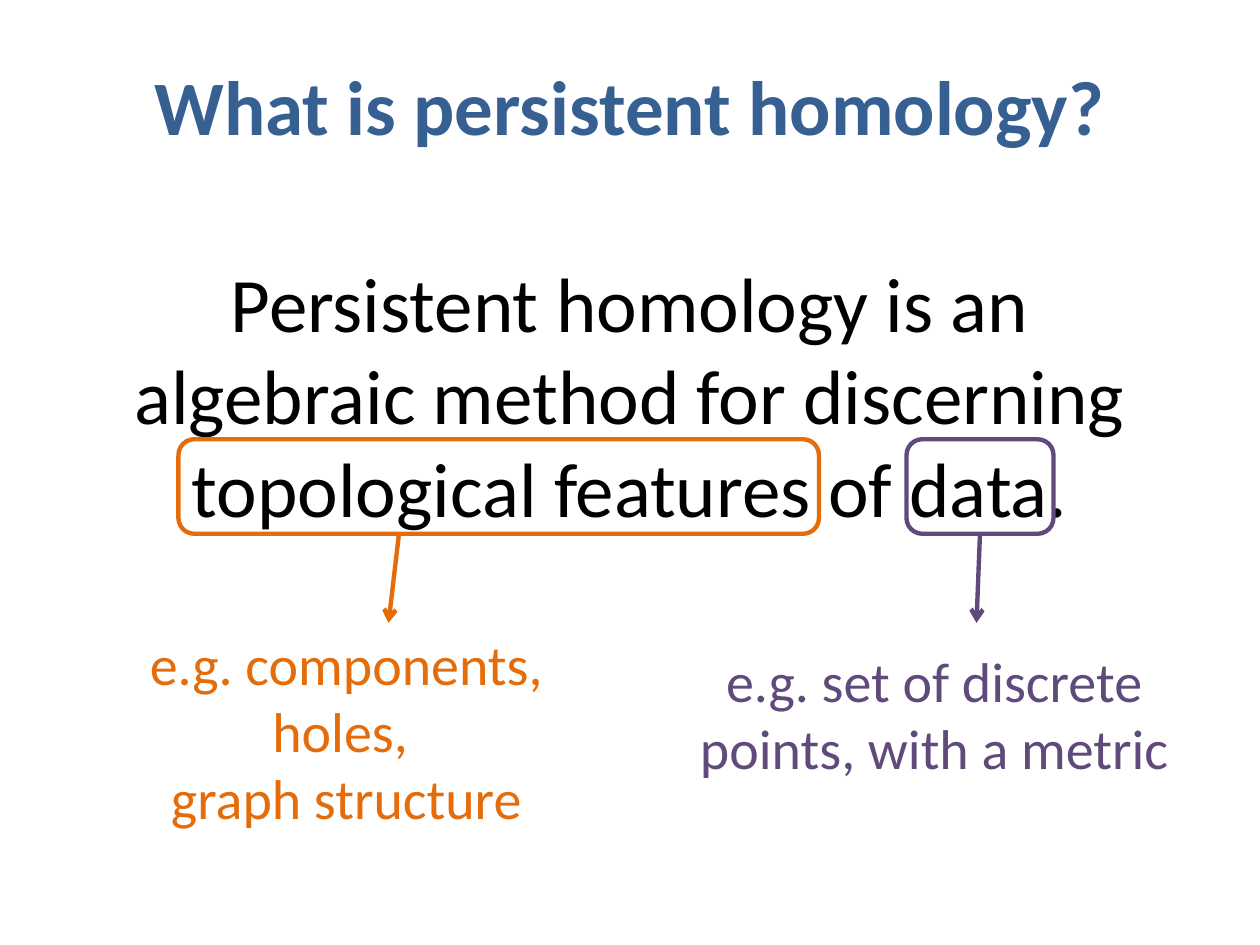
from dataclasses import dataclass

from lxml.etree import SubElement
from pptx import Presentation
from pptx.dml.color import RGBColor
from pptx.enum.shapes import MSO_CONNECTOR, MSO_SHAPE
from pptx.enum.text import MSO_AUTO_SIZE, PP_ALIGN
from pptx.oxml.ns import qn
from pptx.util import Pt


@dataclass(frozen=True)
class Theme:
    font: str = "Calibri"
    title: str = "376092"
    body: str = "000000"
    features: str = "E46C0A"
    data: str = "604A7B"
    large: float = 44
    small: float = 32
    line: float = 2.5


class SlideBuilder:
    def __init__(self, slide, theme):
        self.s = slide
        self.theme = theme

    def text(self, box, paragraphs, size, color, bold=False):
        sp = self.s.shapes.add_textbox(*map(Pt, box))
        tf = sp.text_frame
        tf.word_wrap = True
        tf.auto_size = MSO_AUTO_SIZE.SHAPE_TO_FIT_TEXT
        for i, content in enumerate(paragraphs):
            p = tf.add_paragraph() if i else tf.paragraphs[0]
            p.alignment = PP_ALIGN.CENTER
            r = p.add_run()
            r.text = content
            r.font.name = self.theme.font
            r.font.size = Pt(size)
            r.font.bold = bold
            r.font.color.rgb = RGBColor.from_string(color)

    def frame(self, box, color):
        """Outline a phrase with an unfilled rounded rectangle."""
        sp = self.s.shapes.add_shape(MSO_SHAPE.ROUNDED_RECTANGLE, *map(Pt, box))
        sp.shadow.inherit = False
        sp.fill.background()
        self.stroke(sp, color)
        return sp

    def arrow(self, start, end, color, source=None):
        """Draw an arrow, joined to the bottom of source if one is given."""
        cx = self.s.shapes.add_connector(
            MSO_CONNECTOR.STRAIGHT, *map(Pt, (*start, *end)))
        if source is not None:
            cx.begin_connect(source, 2)
        self.stroke(cx, color)
        SubElement(cx.line._get_or_add_ln(), qn("a:tailEnd"), type="arrow")
        SubElement(cx._element.spPr, qn("a:effectLst"))

    def stroke(self, sp, color):
        sp.line.color.rgb = RGBColor.from_string(color)
        sp.line.width = Pt(self.theme.line)


def main():
    prs = Presentation()
    prs.slide_width, prs.slide_height = Pt(720), Pt(540)
    t = Theme()
    b = SlideBuilder(prs.slides.add_slide(prs.slide_layouts[6]), t)

    b.text((36, 30, 648, 60.5), ["What is persistent homology?"],
           t.large, t.title, bold=True)
    b.text((66, 356, 264, 124), ["e.g. components, holes, ", "graph structure"],
           t.small, t.features)
    b.text((390, 366, 288, 85), ["e.g. set of discrete points, with a metric"],
           t.small, t.data)
    b.text((42, 142.5, 636, 167),
           ["Persistent homology is an algebraic method for discerning "
            "topological features of data."], t.large, t.body)

    top, height, arrow_end = 251, 54, 356
    bottom = top + height
    b.frame((102, top, 366, height), t.features)
    b.arrow((228, bottom), (222, arrow_end), t.features)
    data_frame = b.frame((518, top, 84, height), t.data)
    b.arrow((560, bottom), (558, arrow_end), t.data, data_frame)

    prs.save("out.pptx")


if __name__ == "__main__":
    main()
